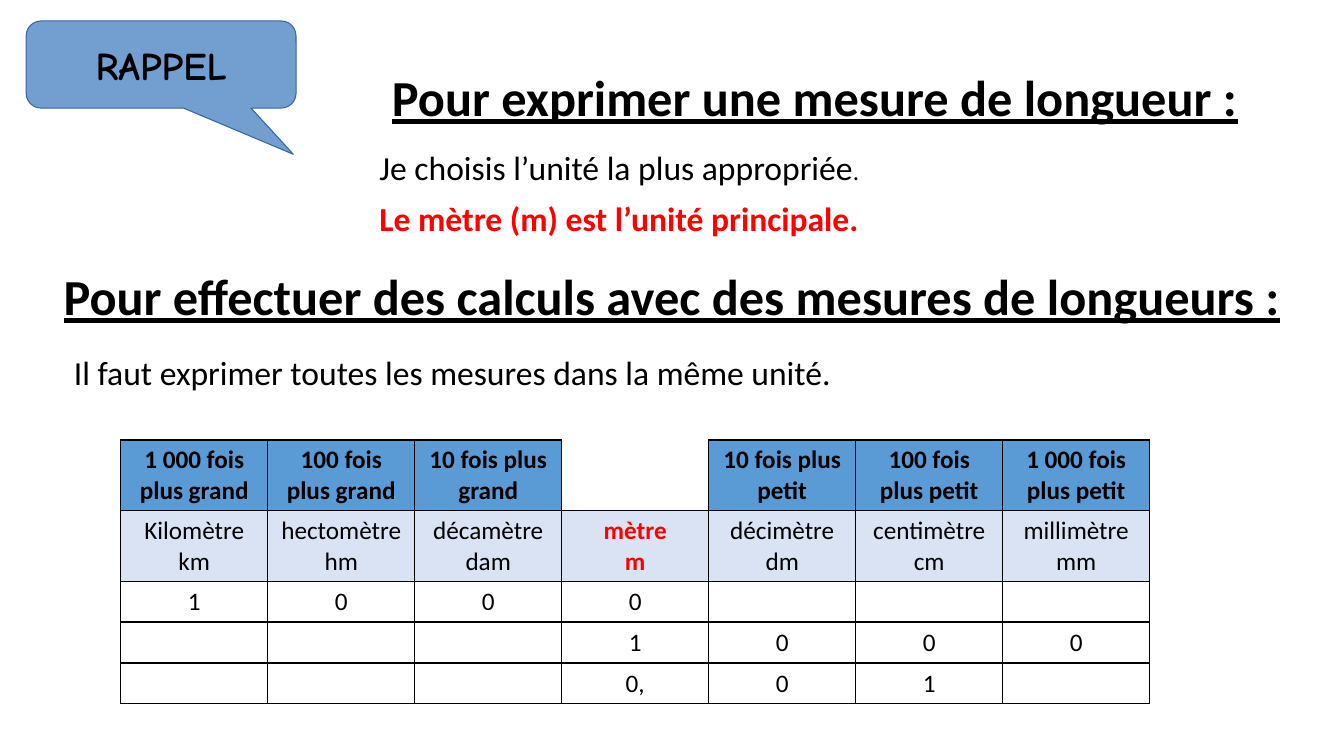
from dataclasses import dataclass

from lxml.etree import SubElement
from pptx import Presentation
from pptx.dml.color import RGBColor
from pptx.enum.shapes import MSO_SHAPE as Preset
from pptx.enum.text import MSO_ANCHOR as Anchor, PP_ALIGN as Align
from pptx.oxml.ns import qn
from pptx.util import Emu, Pt

EMU_PER_PX = 9525


@dataclass(frozen=True)
class Theme:
    black: str = "000000"
    red: str = "FF0000"
    white: str = "FFFFFF"
    callout_fill: str = "729FCF"
    callout_line: str = "3465A4"
    header_fill: str = "5B9BD5"
    unit_fill: str = "DAE3F3"
    body_font: str = "Calibri"
    callout_font: str = "Comic Neue"
    heading: int = 36
    callout: int = 28
    body: int = 24
    small: int = 18


THEME = Theme()

COMPARISONS = ["1 000 fois plus grand", "100 fois plus grand", "10 fois plus grand", "",
               "10 fois plus petit", "100 fois plus petit", "1 000 fois plus petit"]
UNITS = ["Kilomètre\nkm", "hectomètre\nhm", "décamètre\ndam", "mètre\nm",
         "décimètre dm", "centimètre\ncm", "millimètre\nmm"]
DIGITS = [["1", "0", "0", "0", "", "", ""],
          ["", "", "", "1", "0", "0", "0"],
          ["", "", "", "0,", "0", "1", ""]]
METRE_COLUMN = 3


def px(*lengths):
    return [Emu(length * EMU_PER_PX) for length in lengths]


def color(code):
    return RGBColor.from_string(code)


def add_run(paragraph, text, size, ink=THEME.black, bold=False, underline=False,
            font_name=THEME.body_font):
    run = paragraph.add_run()
    run.text = text
    font = run.font
    font.name, font.size, font.bold = font_name, Pt(size), bold
    font.underline = underline
    font.color.rgb = color(ink)


def add_text(slide, box, align=Align.LEFT):
    """Add a wrapping text box and return its paragraph."""
    frame = slide.shapes.add_textbox(*px(*box)).text_frame
    frame.word_wrap = True
    paragraph = frame.paragraphs[0]
    paragraph.alignment = align
    return paragraph


def add_heading(slide, box, text):
    add_run(add_text(slide, box, Align.CENTER), text, THEME.heading,
            bold=True, underline=True)


def add_callout(slide, box, text):
    shape = slide.shapes.add_shape(Preset.ROUNDED_RECTANGULAR_CALLOUT, *px(*box))
    shape.shadow.inherit = False
    for index, value in enumerate((0.49, 1.03, 0.17)):
        shape.adjustments[index] = value
    shape.fill.solid()
    shape.fill.fore_color.rgb = color(THEME.callout_fill)
    shape.line.color.rgb = color(THEME.callout_line)
    shape.line.width = Pt(0.75)
    frame = shape.text_frame
    frame.word_wrap = False
    frame.vertical_anchor = Anchor.MIDDLE
    paragraph = frame.paragraphs[0]
    paragraph.alignment = Align.CENTER
    add_run(paragraph, text, THEME.callout, bold=True, font_name=THEME.callout_font)


def set_borders(cell, open_top):
    properties = cell._tc.get_or_add_tcPr()
    for position, side in enumerate(("lnL", "lnR", "lnT", "lnB")):
        line = properties.makeelement(qn(f"a:{side}"), {"w": str(Pt(1))})
        properties.insert(position, line)
        if side == "lnT" and open_top:
            SubElement(line, qn("a:noFill"))
        else:
            fill = SubElement(line, qn("a:solidFill"))
            SubElement(fill, qn("a:srgbClr"), val=THEME.black)


def fill_cell(cell, text, background, ink, bold, open_top):
    cell.fill.solid()
    cell.fill.fore_color.rgb = color(background)
    set_borders(cell, open_top)
    frame = cell.text_frame
    for index, line in enumerate(text.split("\n") if text else []):
        paragraph = frame.add_paragraph() if index else frame.paragraphs[0]
        paragraph.alignment = Align.CENTER
        add_run(paragraph, line, THEME.small, ink, bold)


def add_unit_table(slide, left, top, column_width, row_heights):
    rows = [COMPARISONS, UNITS, *DIGITS]
    columns = len(UNITS)
    box = px(left, top, column_width * columns, sum(row_heights))
    table = slide.shapes.add_table(len(rows), columns, *box).table
    for column in table.columns:
        column.width, = px(column_width)
    fills = [THEME.header_fill, THEME.unit_fill] + [THEME.white] * len(DIGITS)
    for r, (texts, height, row_fill) in enumerate(zip(rows, row_heights, fills)):
        table.rows[r].height, = px(height)
        for c, text in enumerate(texts):
            is_gap = r == 0 and c == METRE_COLUMN
            is_metre = r == 1 and c == METRE_COLUMN
            fill_cell(table.cell(r, c), text,
                      background=THEME.white if is_gap else row_fill,
                      ink=THEME.red if is_metre else THEME.black,
                      bold=r == 0 or is_metre, open_top=is_gap)


def main():
    presentation = Presentation()
    presentation.slide_width, presentation.slide_height = px(1280, 720)
    slide = presentation.slides.add_slide(presentation.slide_layouts[6])

    add_heading(slide, (235, 58, 1082, 68), "Pour exprimer une mesure de longueur :")
    add_callout(slide, (25, 20, 257, 83), "RAPPEL")

    choice = add_text(slide, (352, 135, 898, 48))
    add_run(choice, "Je choisis l’unité la plus appropriée", THEME.body)
    add_run(choice, ".", THEME.small)
    add_run(add_text(slide, (352, 184, 821, 48)),
            "Le mètre (m) est l’unité principale.", THEME.body, THEME.red, bold=True)

    add_heading(slide, (46, 248, 1188, 68),
                "Pour effectuer des calculs avec des mesures de longueurs :")
    add_run(add_text(slide, (61, 330, 1173, 48)),
            "Il faut exprimer toutes les mesures dans la même unité.", THEME.body)

    add_unit_table(slide, 115, 419, 140, [67, 67, 39, 39, 39])
    presentation.save("out.pptx")


if __name__ == "__main__":
    main()
